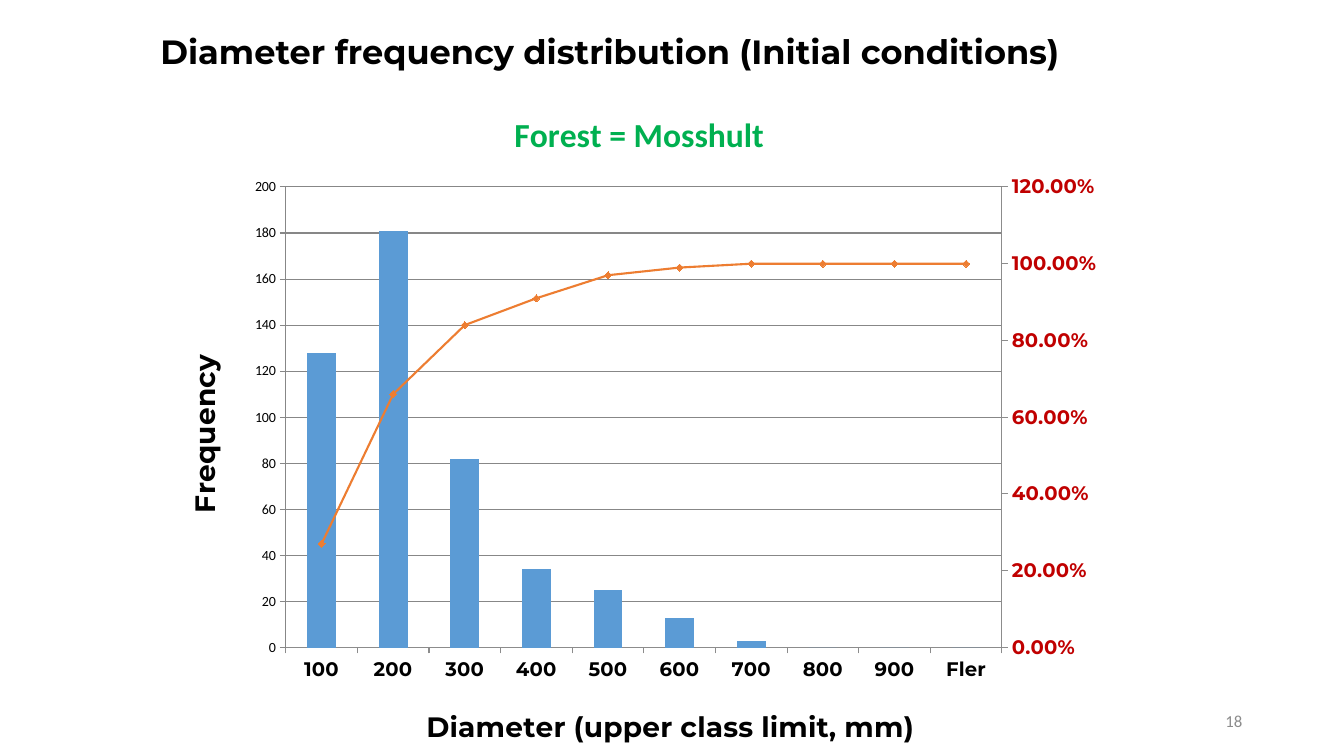
from pptx import Presentation
from pptx.chart.axis import ValueAxis
from pptx.chart.data import CategoryChartData
from pptx.dml.color import RGBColor
from pptx.enum.chart import XL_CHART_TYPE, XL_MARKER_STYLE, XL_TICK_MARK
from pptx.enum.text import MSO_ANCHOR, MSO_AUTO_SIZE, PP_ALIGN
from pptx.oxml import parse_xml
from pptx.oxml.ns import qn
from pptx.util import Inches, Pt

BLACK = RGBColor(0, 0, 0)
GREY = RGBColor(0x8C, 0x8C, 0x8C)
GREEN = RGBColor(0x00, 0xB0, 0x50)
NAVY = RGBColor(0x00, 0x20, 0x60)
RED = RGBColor(0xC0, 0x00, 0x00)
BLUE = RGBColor(0x5B, 0x9B, 0xD5)
ORANGE = RGBColor(0xED, 0x7D, 0x31)

COLUMN = XL_CHART_TYPE.COLUMN_CLUSTERED
DIAMOND = XL_MARKER_STYLE.DIAMOND
OUT, NONE = XL_TICK_MARK.OUTSIDE, XL_TICK_MARK.NONE
LEFT, RIGHT, CENTER = PP_ALIGN.LEFT, PP_ALIGN.RIGHT, PP_ALIGN.CENTER
TOP, MIDDLE = MSO_ANCHOR.TOP, MSO_ANCHOR.MIDDLE
GROW = MSO_AUTO_SIZE.SHAPE_TO_FIT_TEXT

HEAD, BODY = "Montserrat", "Calibri"
CLASSES = [str(n) for n in range(100, 1000, 100)] + ["Fler"]
COUNTS = [128, 181, 82, 34, 25, 13, 3, 0, 0, 0]
SHARES = [0.27, 0.66, 0.84, 0.91, 0.97, 0.99, 1, 1, 1, 1]

SPACE = 'xmlns:c="http://schemas.openxmlformats.org/drawingml/2006/chart"'
LINE = f"""<c:lineChart {SPACE}><c:grouping val="standard"/><c:varyColors val="0"/>
<c:marker val="1"/><c:axId val="501"/><c:axId val="502"/></c:lineChart>"""
VALUES = f"""<c:valAx {SPACE}><c:axId val="502"/><c:scaling/><c:delete val="0"/>
<c:axPos val="r"/><c:majorTickMark val="out"/><c:minorTickMark val="none"/>
<c:tickLblPos val="nextTo"/><c:crossAx val="501"/><c:crosses val="max"/></c:valAx>"""
LABELS = f"""<c:catAx {SPACE}><c:axId val="501"/><c:scaling/><c:delete val="1"/>
<c:axPos val="b"/><c:crossAx val="502"/><c:crosses val="autoZero"/></c:catAx>"""


def style(font, size, color=BLACK, face=HEAD, bold=True):
    """Set the face, size and colour of a font."""
    font.name, font.size, font.bold = face, Pt(size), bold
    font.color.rgb = color


def write(frame, text, size, align=LEFT, **look):
    """Put one formatted line of text in a frame."""
    frame.text = text
    line = frame.paragraphs[0]
    line.alignment = align
    style(line.runs[0].font, size, **look)


def strip(node, tag):
    """Remove the children of a node that have the given tag."""
    for child in node.findall(qn(tag)):
        node.remove(child)


def place(node, index, **spots):
    """Give a chart part a fixed layout in fractions of the chart."""
    strip(node, "c:layout")
    modes = "".join(f'<c:{key}Mode val="edge"/>' for key in "xy")
    sizes = "".join(f'<c:{key} val="{val}"/>' for key, val in spots.items())
    target = '<c:layoutTarget val="inner"/>' if "w" in spots else ""
    node.insert(index, parse_xml(
        f"<c:layout {SPACE}><c:manualLayout>{target}{modes}{sizes}"
        "</c:manualLayout></c:layout>"))


def label(title, text, size, x, y, **look):
    """Write a chart or axis title at a given spot."""
    write(title.text_frame, text, size, CENTER, **look)
    place(title._element, 1, x=x, y=y)


def trim(axis, color=BLACK):
    """Format the line, ticks and labels of an axis."""
    axis.has_major_gridlines = False
    axis.major_tick_mark, axis.minor_tick_mark = OUT, NONE
    axis.format.line.color.rgb = GREY
    axis.format.line.width = Pt(0.75)
    style(axis.tick_labels.font, 14, color)


def scale(axis, top, step, form):
    """Set the range and number format of a value axis."""
    axis.minimum_scale, axis.maximum_scale, axis.major_unit = 0, top, step
    axis.tick_labels.number_format = form
    axis.tick_labels.number_format_is_linked = False


def split(chart):
    """Move the second series to a line on a right axis and return the axis."""
    bars = chart.plots[0]._element
    area = bars.getparent()
    line = parse_xml(LINE)
    share = bars.findall(qn("c:ser"))[1]
    strip(share, "c:invertIfNegative")
    line.insert(2, share)
    bars.addnext(line)
    values = parse_xml(VALUES)
    area.find(qn("c:valAx")).addnext(values)
    values.addnext(parse_xml(LABELS))
    place(area, 0, x=0.14, y=0.16, w=0.74, h=0.68)
    return ValueAxis(values)


def draw_chart(slide, box):
    """Draw the counts as columns and the running share as a line."""
    data = CategoryChartData()
    data.categories = CLASSES
    data.add_series("Series 1", COUNTS)
    data.add_series("Series 2", SHARES, "0.00%")
    chart = slide.shapes.add_chart(COLUMN, *box, data).chart
    style(chart.font, 10, face=BODY, bold=False)
    chart.has_legend = False
    label(chart.chart_title, "Forest = Mosshult", 24, 0.37, 0.04,
          color=GREEN, face=BODY)

    right = split(chart)
    bars, line = chart.plots
    bars.gap_width = 150
    bars.vary_by_categories = False
    fill = bars.series[0].format.fill
    fill.solid()
    fill.fore_color.rgb = BLUE
    share = line.series[0]
    share.smooth = False
    share.format.line.color.rgb = ORANGE
    share.format.line.width = Pt(1.5)
    share.marker.style, share.marker.size = DIAMOND, 5
    share.marker.format.fill.solid()
    share.marker.format.fill.fore_color.rgb = ORANGE
    share.marker.format.line.color.rgb = ORANGE

    base, left = chart.category_axis, chart.value_axis
    trim(base)
    trim(left, NAVY)
    trim(right, RED)
    scale(left, 200, 20, "General")
    scale(right, 1.2, 0.2, "0.00%")
    label(base.axis_title, "Diameter (upper class limit, mm)", 20, 0.28, 0.92)
    label(left.axis_title, "Frequency", 20, 0.03, 0.4)


def draw_title(slide, box):
    """Move and fill the title."""
    title = slide.shapes.title
    title.left, title.top, title.width, title.height = box
    frame = title.text_frame
    frame.word_wrap, frame.auto_size = False, GROW
    frame.vertical_anchor = TOP
    write(frame, "Diameter frequency distribution (Initial conditions)", 24)


def draw_page(slide, box):
    """Write the page number."""
    frame = slide.shapes.add_textbox(*box).text_frame
    frame.word_wrap, frame.vertical_anchor = True, MIDDLE
    write(frame, "18", 12, RIGHT, color=GREY, face=BODY, bold=False)


def main():
    """Build and save the slide."""
    deck = Presentation()
    deck.slide_width, deck.slide_height = Inches(13.33), Inches(7.5)
    slide = deck.slides.add_slide(deck.slide_layouts[5])
    draw_page(slide, [Inches(n) for n in (9.42, 6.95, 3, 0.4)])
    draw_chart(slide, [Inches(n) for n in (1.49, 0.78, 9.6, 6.72)])
    draw_title(slide, [Inches(n) for n in (1.49, 0.26, 9.64, 0.5)])
    deck.save("out.pptx")


if __name__ == "__main__":
    main()
